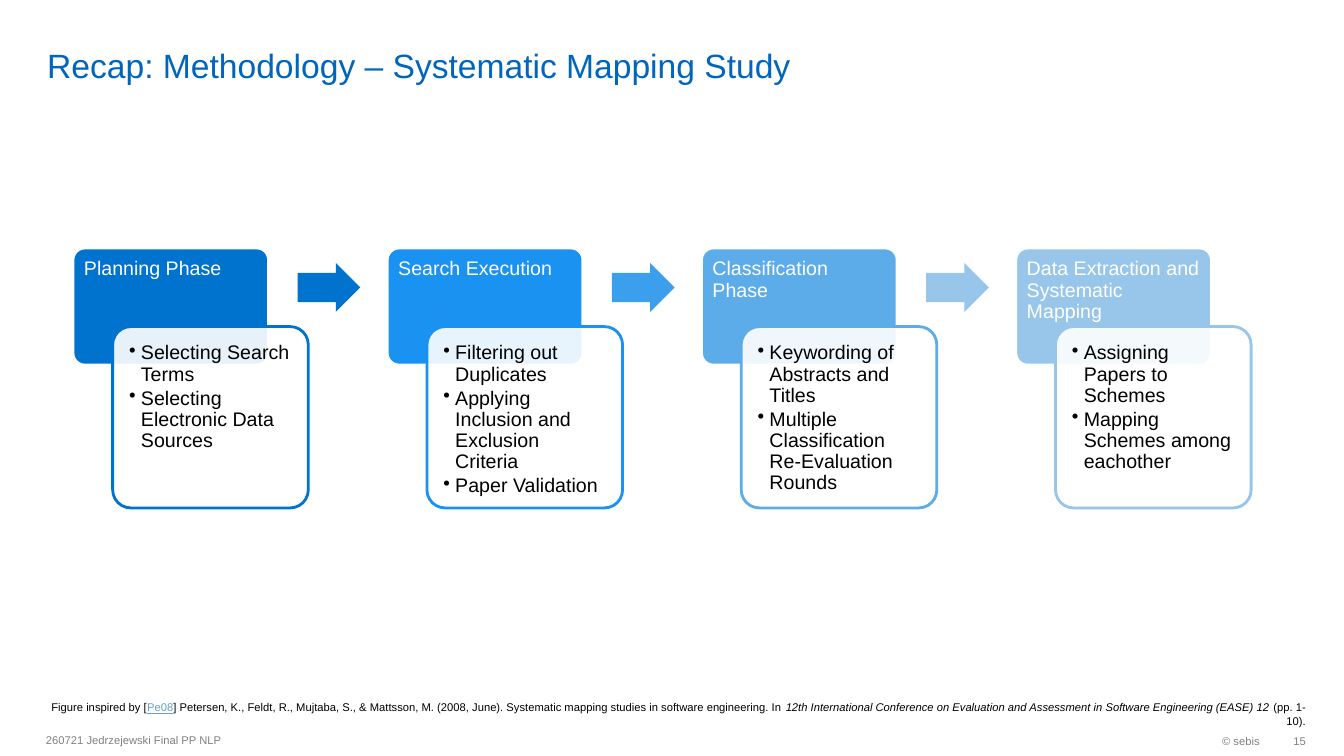
from lxml import etree
from pptx import Presentation
from pptx import util as u
from pptx.dml.color import RGBColor
from pptx.enum import shapes, text
from pptx.oxml import ns

PHASES = [
    ("Planning Phase", "0073CF", "0073CF",
     ["Selecting Search Terms", "Selecting Electronic Data Sources"]),
    ("Search Execution", "1992F1", "3C9FED",
     ["Filtering out Duplicates", "Applying Inclusion and Exclusion Criteria",
      "Paper Validation"]),
    ("Classification Phase", "5CACEA", "98C6EA",
     ["Keywording of Abstracts and Titles",
      "Multiple Classification Re-Evaluation Rounds"]),
    ("Data Extraction and Systematic Mapping", "98C6EA", None,
     ["Assigning Papers to Schemes", "Mapping Schemes among eachother"]),
]
CITATION = [
    ("Figure inspired by [", {}),
    ("Pe08", {"color": "64A0C8", "underline": True}),
    ("] Petersen, K., Feldt, R., Mujtaba, S., & Mattsson, M. (2008, June). "
     "Systematic mapping studies in software engineering. In ", {}),
    ("12th International Conference on Evaluation and Assessment in "
     "Software Engineering (EASE) 12", {"italic": True}),
    (" (pp. 1-10).", {}),
]
FIRST_LEFT, PHASE_STEP = 1.84, 7.92


def rgb(value):
    return RGBColor.from_string(value)


class MappingSlide:
    font = "Arial"
    small, normal, large = 8, 14, 24

    def __init__(self, deck):
        self.slide = deck.slides.add_slide(deck.slide_layouts[5])

    def style(self, run, size, color, underline=None, italic=None):
        run.font.name = self.font
        run.font.size = u.Pt(size)
        run.font.color.rgb = rgb(color)
        run.font.underline = underline
        run.font.italic = italic

    def frame(self, shape, anchor, left, top, right, bottom):
        frame = shape.text_frame
        frame.word_wrap = True
        frame.auto_size = text.MSO_AUTO_SIZE.NONE
        frame.vertical_anchor = anchor
        frame.margin_left, frame.margin_top = u.Cm(left), u.Cm(top)
        frame.margin_right, frame.margin_bottom = u.Cm(right), u.Cm(bottom)
        return frame

    def title(self, wording):
        heading = self.slide.shapes.title
        heading.left, heading.top = u.Cm(0.94), u.Cm(0.13)
        heading.width, heading.height = u.Cm(29.41), u.Cm(2.01)
        frame = self.frame(heading, text.MSO_ANCHOR.BOTTOM, 0.25, 0, 0.25, 0)
        frame.text = wording
        frame.paragraphs[0].alignment = text.PP_ALIGN.LEFT
        self.style(frame.paragraphs[0].runs[0], self.large, "0065BD")

    def note(self, box, parts, color, align=text.PP_ALIGN.RIGHT,
             anchor=text.MSO_ANCHOR.MIDDLE, right=0.25):
        note = self.slide.shapes.add_textbox(*map(u.Cm, box))
        frame = self.frame(note, anchor, 0.25, 0.13, right, 0.13)
        line = frame.paragraphs[0]
        line.alignment = align
        for wording, look in parts:
            run = line.add_run()
            run.text = wording
            self.style(run, self.small, **{"color": color, **look})

    def shape(self, kind, box, adjustments, fill, line=None):
        shape = self.slide.shapes.add_shape(kind, *map(u.Cm, box))
        shape.shadow.inherit = False
        for index, value in enumerate(adjustments):
            shape.adjustments[index] = value
        shape.fill.solid()
        shape.fill.fore_color.rgb = rgb(fill)
        if line:
            shape.line.color.rgb = rgb(line)
            shape.line.width = u.Pt(2)
        else:
            shape.line.fill.background()
        return shape

    def panel(self, box, fill, line):
        return self.shape(shapes.MSO_SHAPE.ROUNDED_RECTANGLE, box, [0.1],
                          fill, line)

    def header(self, left, wording, color):
        header = self.panel((left, 6.25, 4.93, 2.95), color, "FFFFFF")
        frame = self.frame(header, text.MSO_ANCHOR.TOP, 0.19, 0.19, 0.19, 0.1)
        frame.text = wording
        self.paragraph(frame.paragraphs[0], "FFFFFF")

    def paragraph(self, paragraph, color):
        paragraph.alignment = text.PP_ALIGN.LEFT
        paragraph.line_spacing = 0.9
        self.style(paragraph.runs[0], self.normal, color)

    def bullet(self, paragraph):
        props = paragraph._p.get_or_add_pPr()
        props.set("marL", str(u.Cm(0.3)))
        props.set("indent", str(-u.Cm(0.3)))
        tint = etree.SubElement(props, ns.qn("a:buClr"))
        etree.SubElement(tint, ns.qn("a:srgbClr"), val="000000")
        etree.SubElement(props, ns.qn("a:buChar"), char="•")

    def card(self, left, steps, color):
        card = self.panel((left, 8.23, 4.93, 4.57), "FFFFFF", color)
        tint = card.fill._xPr.find(".//" + ns.qn("a:srgbClr"))
        etree.SubElement(tint, ns.qn("a:alpha"), val="90000")
        frame = self.frame(card, text.MSO_ANCHOR.TOP, 0.28, 0.28, 0.28, 0.28)
        frame.text = "\n".join(steps)
        for step in frame.paragraphs:
            self.bullet(step)
            self.paragraph(step, "000000")
            step.space_after = u.Pt(2.1)

    def arrow(self, left, color):
        self.shape(shapes.MSO_SHAPE.RIGHT_ARROW, (left, 6.63, 1.58, 1.23),
                   [0.6, 0.5], color)


def main():
    deck = Presentation()
    deck.slide_width, deck.slide_height = u.Cm(33.87), u.Cm(19.05)
    study = MappingSlide(deck)
    study.title("Recap: Methodology – Systematic Mapping Study")
    study.note((26.06, 18.26, 5.94, 0.81), [("© sebis", {})], "808080")
    study.note((32, 18.26, 0.91, 0.81), [("15", {})], "7F7F7F", right=0)
    study.note((0.91, 17.53, 32, 0.94), CITATION, "000000",
               anchor=text.MSO_ANCHOR.TOP, right=0)
    study.note((0.91, 18.24, 16, 0.81),
               [("260721 Jedrzejewski Final PP NLP", {})], "808080",
               align=text.PP_ALIGN.LEFT)
    for index, (phase, color, arrow_color, steps) in enumerate(PHASES):
        left = FIRST_LEFT + index * PHASE_STEP
        study.header(left, phase, color)
        study.card(left + 1, steps, color)
        if arrow_color:
            study.arrow(left + 5.66, arrow_color)
    deck.save("out.pptx")


if __name__ == "__main__":
    main()
